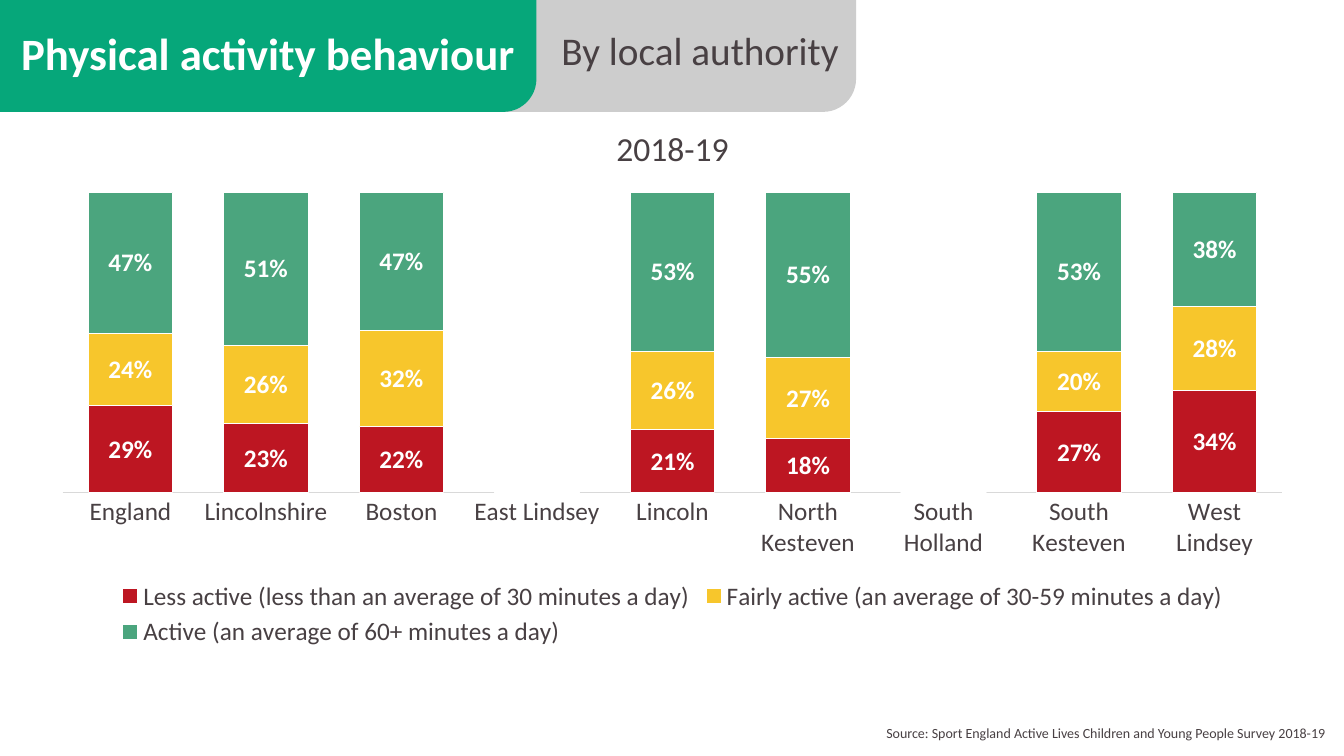
from pptx import Presentation
from pptx.chart.data import CategoryChartData
from pptx.dml.color import RGBColor
from pptx.enum.chart import XL_CHART_TYPE, XL_LABEL_POSITION, XL_LEGEND_POSITION, XL_TICK_MARK
from pptx.enum.shapes import MSO_SHAPE
from pptx.enum.text import MSO_ANCHOR, MSO_AUTO_SIZE, PP_ALIGN
from pptx.util import Inches, Pt

STACKED = XL_CHART_TYPE.COLUMN_STACKED
CENTER = XL_LABEL_POSITION.CENTER
BOTTOM = XL_LEGEND_POSITION.BOTTOM
NO_TICK = XL_TICK_MARK.NONE
TAB = MSO_SHAPE.ROUND_1_RECTANGLE
TOP = MSO_ANCHOR.TOP
FIT_SHAPE = MSO_AUTO_SIZE.SHAPE_TO_FIT_TEXT
LEFT, RIGHT = PP_ALIGN.LEFT, PP_ALIGN.RIGHT

FONT = "Calibri"
TEXT, WHITE, AXIS_GREY = "484043", "FFFFFF", "D9D9D9"
TAB_GREY, TAB_GREEN = "CDCDCD", "06A77A"
TAB_HEIGHT = 1.11

AREAS = ["England", "Lincolnshire", "Boston", "East Lindsey", "Lincoln",
         "North Kesteven", "South Holland", "South Kesteven", "West Lindsey"]
ACTIVITY_LEVELS = [
    ("Less active (less than an average of 30 minutes a day)", "BD1622",
     [0.29, 0.23, 0.22, 0, 0.21, 0.18, 0, 0.27, 0.34]),
    ("Fairly active (an average of 30-59 minutes a day)", "F7C62C",
     [0.24, 0.26, 0.32, 0, 0.26, 0.27, 0, 0.2, 0.28]),
    ("Active (an average of 60+ minutes a day)", "4BA57E",
     [0.47, 0.51, 0.47, 0, 0.53, 0.55, 0, 0.53, 0.38]),
]


def rgb(value):
    """Turn a hex string into a colour."""
    return RGBColor.from_string(value)


def style_font(font, size, color=TEXT, bold=False):
    """Set the face, size, colour and weight of a font."""
    font.name = FONT
    font.size = Pt(size)
    font.bold = bold
    font.color.rgb = rgb(color)


def style_line(line, color):
    """Give a line its colour and the common thin width."""
    line.color.rgb = rgb(color)
    line.width = Pt(0.75)


def fill_text(box, text, size, color=TEXT, bold=False, align=LEFT):
    """Write one styled line of text into a box."""
    frame = box.text_frame
    frame.word_wrap = True
    frame.auto_size = FIT_SHAPE
    frame.vertical_anchor = TOP
    para = frame.paragraphs[0]
    para.alignment = align
    span = para.add_run()
    span.text = text
    style_font(span.font, size, color, bold)


def add_text(page, left, top, width, height, text, size, align=LEFT):
    """Add a text box with one line of text."""
    box = page.shapes.add_textbox(Inches(left), Inches(top), Inches(width), Inches(height))
    fill_text(box, text, size, align=align)


def add_tab(page, left, width, color):
    """Add a header tab with its lower right corner rounded."""
    tab = page.shapes.add_shape(TAB, Inches(left), 0, Inches(width), Inches(TAB_HEIGHT))
    tab.adjustments[0] = 0.295
    tab.rotation = 180
    tab.element.spPr.xfrm.set("flipH", "1")
    tab.shadow.inherit = False
    tab.fill.solid()
    tab.fill.fore_color.rgb = rgb(color)
    tab.line.fill.background()


def place_title(page, text):
    """Put the title placeholder over the green tab."""
    title = page.shapes.title
    title.left, title.top = Inches(0.11), Inches(0.2)
    title.width, title.height = Inches(5.32), Inches(0.64)
    fill_text(title, text, 32, WHITE, bold=True)
    title.element.getparent().append(title.element)


def style_series(series, color):
    """Colour one activity level and label its values."""
    series.format.fill.solid()
    series.format.fill.fore_color.rgb = rgb(color)
    style_line(series.format.line, WHITE)
    series.invert_if_negative = False
    labels = series.data_labels
    labels.show_value = True
    labels.number_format = "0%"
    labels.number_format_is_linked = False
    labels.position = CENTER
    style_font(labels.font, 18, WHITE, bold=True)


def style_axes(chart):
    """Show a plain category axis and hide the value axis."""
    areas = chart.category_axis
    areas.major_tick_mark = areas.minor_tick_mark = NO_TICK
    style_font(areas.tick_labels.font, 18)
    style_line(areas.format.line, AXIS_GREY)
    values = chart.value_axis
    values.minimum_scale, values.maximum_scale = 0, 1
    values.has_major_gridlines = False
    values.visible = False


def add_activity_chart(page):
    """Add the stacked columns of activity levels by area."""
    data = CategoryChartData(number_format="0%")
    data.categories = AREAS
    for name, _, values in ACTIVITY_LEVELS:
        data.add_series(name, values)
    chart = page.shapes.add_chart(
        STACKED, Inches(0.37), Inches(1.03), Inches(12.6), Inches(5.44), data).chart
    style_font(chart.font, 18)
    chart.has_title = True
    span = chart.chart_title.text_frame.paragraphs[0].add_run()
    span.text = "2018-19"
    style_font(span.font, 24)
    chart.chart_title.include_in_layout = False
    chart.has_legend = True
    chart.legend.position = BOTTOM
    chart.legend.include_in_layout = False
    style_font(chart.legend.font, 18)
    plot = chart.plots[0]
    plot.gap_width, plot.overlap = 60, 100
    plot.vary_by_categories = False
    for series, (_, color, _) in zip(plot.series, ACTIVITY_LEVELS):
        style_series(series, color)
    style_axes(chart)


def main():
    """Build the slide and save it."""
    deck = Presentation()
    deck.slide_width, deck.slide_height = Inches(13.33), Inches(7.5)
    page = deck.slides.add_slide(deck.slide_layouts.get_by_name("Title Only"))
    add_text(page, 5.95, 7.14, 7.29, 0.27,
             "Source: Sport England Active Lives Children and Young People Survey 2018-19",
             10, align=RIGHT)
    add_activity_chart(page)
    add_tab(page, 4, 4.49, TAB_GREY)
    add_tab(page, 0, 5.32, TAB_GREEN)
    place_title(page, "Physical activity behaviour")
    add_text(page, 5.47, 0.21, 3.02, 0.57, "By local authority", 28)
    deck.save("out.pptx")


if __name__ == "__main__":
    main()
